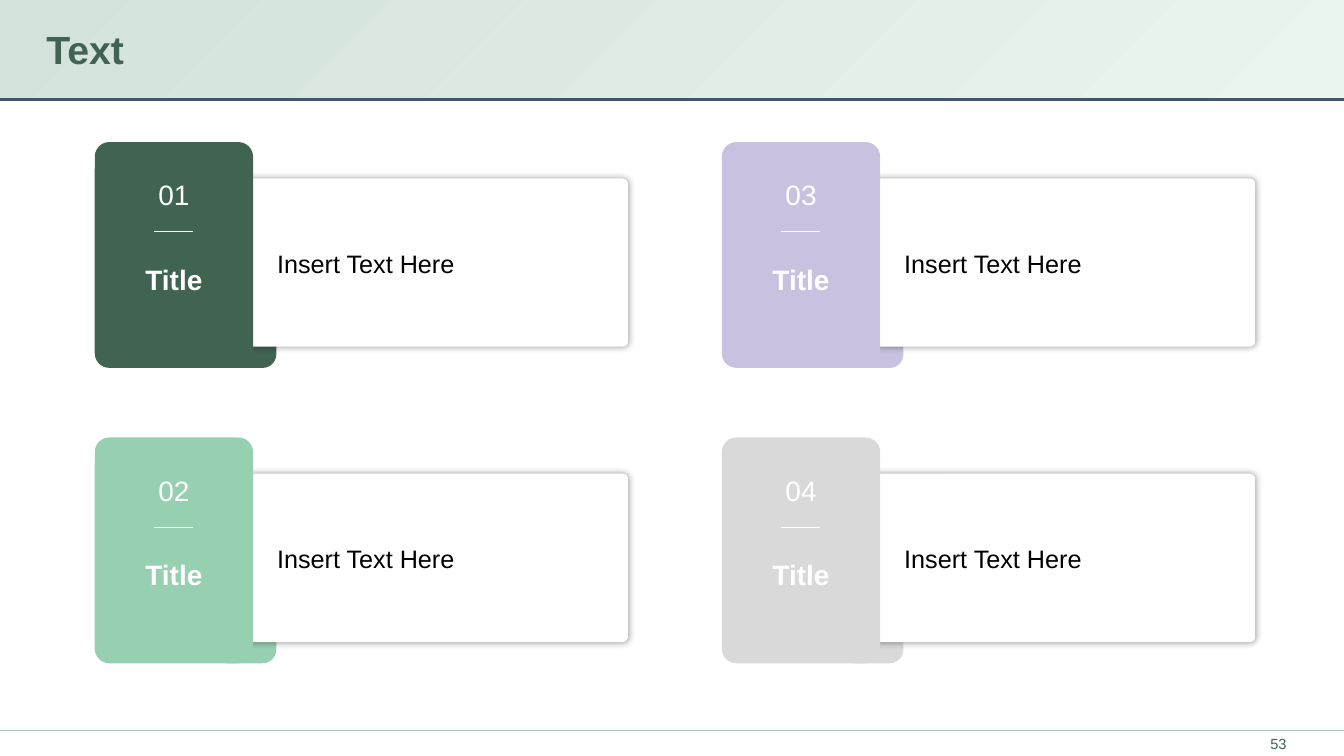
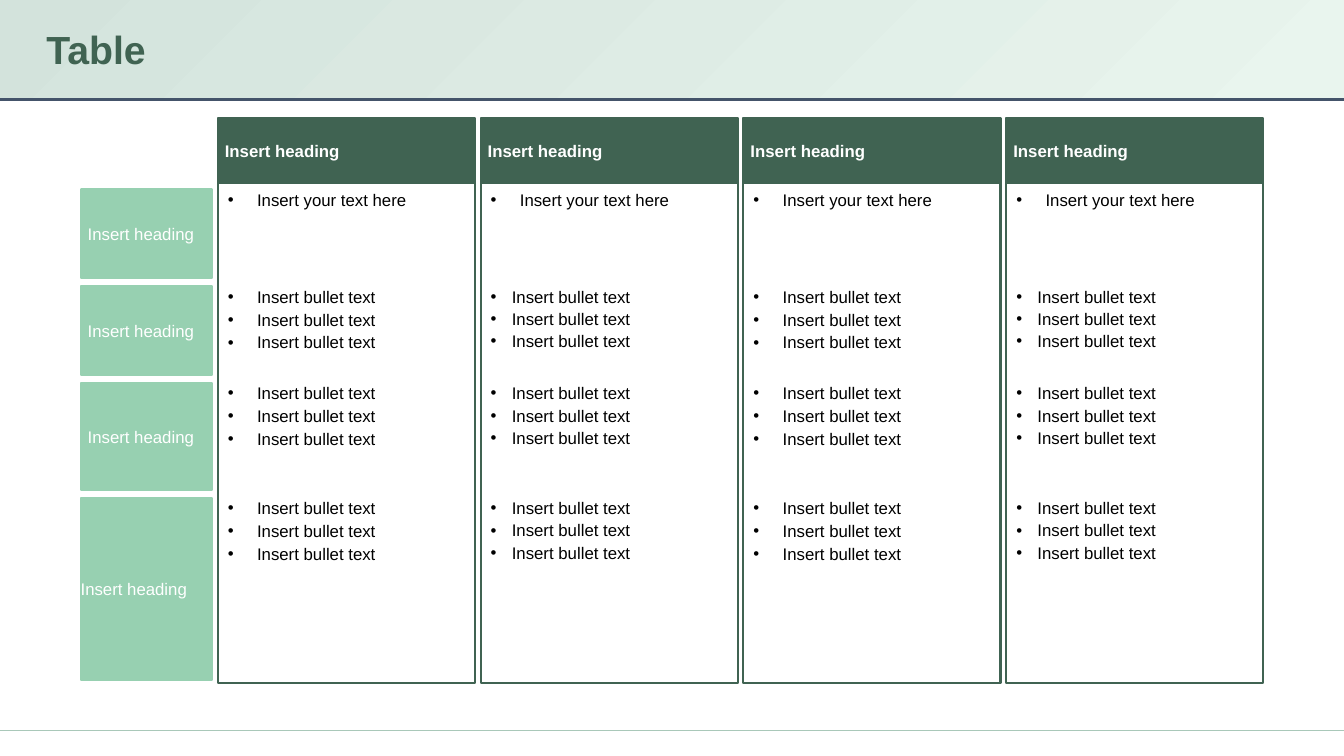
from lxml import etree
from pptx import Presentation
from pptx.dml.color import RGBColor
from pptx.enum.shapes import MSO_CONNECTOR, MSO_SHAPE
from pptx.enum.text import MSO_ANCHOR, PP_ALIGN
from pptx.oxml.ns import qn
from pptx.util import Inches, Pt

RECTANGLE = MSO_SHAPE.RECTANGLE
ROUNDED = MSO_SHAPE.ROUNDED_RECTANGLE
TOP_ROUNDED = MSO_SHAPE.ROUND_2_SAME_RECTANGLE
STRAIGHT = MSO_CONNECTOR.STRAIGHT
TOP, MIDDLE = MSO_ANCHOR.TOP, MSO_ANCHOR.MIDDLE
LEFT, CENTER = PP_ALIGN.LEFT, PP_ALIGN.CENTER

COLORS = {
    "dark": "406352", "mint": "97D0B1", "lilac": "C8C2E0", "gray": "D9D9D9",
    "slate": "44546A", "rule": "A9C8B9", "white": "FFFFFF", "black": "000000",
    "band_start": "D3E3DC", "band_end": "E9F5EE",
}
FONT = "Arial"
NO_INSETS = (0, 0, 0, 0)
BOX_INSETS = (0.1, 0.05, 0.1, 0.05)


def color(name):
    return RGBColor.from_string(COLORS[name])


class Deck:
    """Holds the shared style and the current slide."""

    def __init__(self):
        self.presentation = Presentation()
        self.presentation.slide_width = Inches(13.33)
        self.presentation.slide_height = Inches(7.5)
        self.slide = None

    def add_slide(self, title, number=None):
        self.slide = self.presentation.slides.add_slide(self.presentation.slide_layouts[6])
        self.shape(RECTANGLE, 0, 0.95, 13.34, 0.05, "slate")
        band = self.shape(RECTANGLE, -0.01, 0, 13.34, 0.97, "band_start")
        band.fill.gradient()
        band.fill.gradient_angle = 315
        for stop, name in zip(band.fill.gradient_stops, ("band_start", "band_end")):
            stop.color.rgb = color(name)
        self.line(0, 7.25, 13.34, "rule")
        self.text(0.46, 0.08, 12.41, 0.8, title, 28, "dark", bold=True, insets=NO_INSETS)
        if number:
            self.text(12.49, 7.26, 0.38, 0.23, number, 10.5, "dark",
                      align=CENTER, insets=NO_INSETS)

    def shape(self, kind, left, top, width, height, fill, outline=None, corners=()):
        shape = self.slide.shapes.add_shape(
            kind, Inches(left), Inches(top), Inches(width), Inches(height))
        shape.shadow.inherit = False
        shape.fill.solid()
        shape.fill.fore_color.rgb = color(fill)
        if outline:
            shape.line.color.rgb = color(outline)
            shape.line.width = Pt(1.5)
        else:
            shape.line.fill.background()
        for index, corner in enumerate(corners):
            shape.adjustments[index] = corner
        return shape

    def soft_shadow(self, shape):
        effects = shape._element.spPr.find(qn("a:effectLst"))
        shadow = etree.SubElement(effects, qn("a:outerShdw"), blurRad=str(Pt(5)), dist="0", dir="0",
                                  algn="ctr", rotWithShape="0")
        shade = etree.SubElement(shadow, qn("a:srgbClr"), val=COLORS["black"])
        etree.SubElement(shade, qn("a:alpha"), val="40000")

    def line(self, left, top, width, name):
        line = self.slide.shapes.add_connector(
            STRAIGHT, Inches(left), Inches(top), Inches(left + width), Inches(top))
        line.line.color.rgb = color(name)
        line.line.width = Pt(0.75)
        etree.SubElement(line._element.spPr, qn("a:effectLst"))

    def frame(self, shape, insets, anchor):
        frame = shape.text_frame
        frame.word_wrap = True
        frame.vertical_anchor = anchor
        (frame.margin_left, frame.margin_top,
         frame.margin_right, frame.margin_bottom) = map(Inches, insets)
        return frame

    def text_box(self, left, top, width, height, insets, anchor):
        box = self.slide.shapes.add_textbox(
            Inches(left), Inches(top), Inches(width), Inches(height))
        return self.frame(box, insets, anchor)

    def run(self, paragraph, text, size, name, bold=False):
        run = paragraph.add_run()
        run.text = text
        run.font.name = FONT
        run.font.size = Pt(size)
        run.font.bold = bold
        run.font.color.rgb = color(name)

    def text(self, left, top, width, height, text, size, name,
             bold=False, align=LEFT, insets=BOX_INSETS):
        paragraph = self.text_box(left, top, width, height, insets, MIDDLE).paragraphs[0]
        paragraph.alignment = align
        self.run(paragraph, text, size, name, bold)

    def label(self, left, top, width, height, fill, text, insets, bold=False):
        shape = self.shape(RECTANGLE, left, top, width, height, fill, fill)
        paragraph = self.frame(shape, insets, MIDDLE).paragraphs[0]
        paragraph.alignment = LEFT
        self.run(paragraph, text, 12, "white", bold)

    def bullets(self, left, top, width, height, items, indent, gap):
        frame = self.text_box(left, top, width, height, NO_INSETS, TOP)
        for index, item in enumerate(items):
            paragraph = frame.add_paragraph() if index else frame.paragraphs[0]
            paragraph.level = 1
            paragraph.space_before = Pt(gap if index else 0)
            properties = paragraph._p.get_or_add_pPr()
            properties.set("marL", str(Inches(indent)))
            properties.set("indent", str(Inches(0.01 - indent)))
            bullet_color = etree.SubElement(properties, qn("a:buClr"))
            etree.SubElement(bullet_color, qn("a:srgbClr"), val=COLORS["black"])
            etree.SubElement(properties, qn("a:buFont"), typeface=FONT)
            etree.SubElement(properties, qn("a:buChar"), char="•")
            self.run(paragraph, item, 12, "black")

    def card(self, left, top, number, fill):
        self.shape(TOP_ROUNDED, left + 1.17, top + 1.87, 0.63, 0.37, fill,
                   corners=(0.364, 0)).rotation = 180
        panel = self.shape(ROUNDED, left + 1.03, top + 0.36, 4.26, 1.67, "white", corners=(0.033,))
        self.soft_shadow(panel)
        self.shape(ROUNDED, left, top, 1.57, 2.24, fill, corners=(0.092,))
        self.text(left + 0.49, top + 0.3, 0.59, 0.44, number, 20, "white", align=CENTER)
        self.line(left + 0.59, top + 0.89, 0.38, "white")
        self.text(left + 0.37, top + 1.11, 0.83, 0.5, "Title", 20, "white", True, CENTER)
        self.text(left + 1.71, top + 0.95, 3.26, 0.5, "Insert Text Here", 18, "black")


def add_text_slide(deck):
    deck.add_slide("Text", "53")
    for index, fill in enumerate(("dark", "mint", "lilac", "gray")):
        column, row = divmod(index, 2)
        deck.card(0.94 + 6.22 * column, 1.41 + 2.93 * row, f"{index + 1:02}", fill)


def add_table_slide(deck):
    deck.add_slide("Table")
    columns = [2.16 + 7.82 / 3 * index for index in range(4)]
    for left in columns:
        deck.shape(RECTANGLE, left, 1.82, 2.55, 4.96, "white", "dark")
        deck.label(left, 1.17, 2.55, 0.65, "dark", "Insert heading",
                   (0.07, 0.04, 0.07, 0.04), bold=True)
    top = 1.88
    label_insets = (0.07, 0.04, 0, 0.04)
    single, triple = ["Insert your text here"], ["Insert bullet text"] * 3
    rows = (
        (0.88, single, label_insets),
        (0.88, triple, label_insets),
        (1.06, triple, label_insets),
        (1.81, triple, NO_INSETS),
    )
    for height, items, insets in rows:
        deck.label(0.8, top, 1.3, height, "mint", "Insert heading", insets)
        for index, left in enumerate(columns):
            tight = index % 2 == 1 and items is triple
            indent, gap = (0.22, 1.5) if tight else (0.3, 2)
            deck.bullets(left + 0.09, top, 2.37, 0.21 + 0.23 * (len(items) - 1),
                         items, indent, gap)
        top += height + 0.08


def main():
    deck = Deck()
    add_text_slide(deck)
    add_table_slide(deck)
    deck.presentation.save("out.pptx")


if __name__ == "__main__":
    main()
